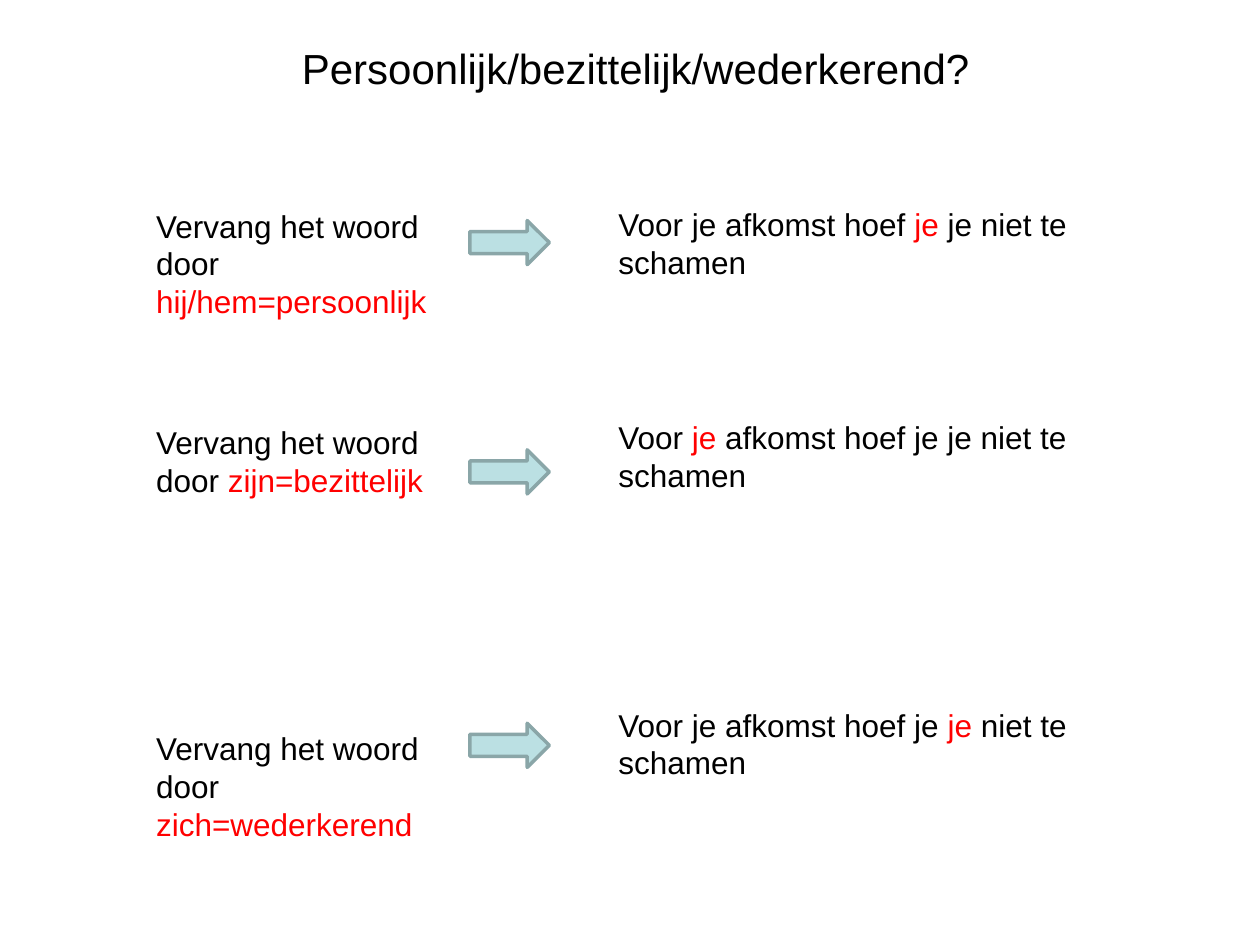
import pptx
import pptx.util
import pptx.dml.color
import pptx.enum.shapes
import pptx.enum.text

Inches = pptx.util.Inches
Pt = pptx.util.Pt
COLORS = {"text": "000000", "accent": "FF0000", "arrow": "BBE0E3", "outline": "8AA6A8"}


def rgb(name):
    return pptx.dml.color.RGBColor.from_string(COLORS[name])


def add_text(page, left, top, width, height, parts, size=18):
    """Add a wrapped text box; parts alternate between text and accent colour."""
    box = page.shapes.add_textbox(Inches(left), Inches(top), Inches(width), Inches(height))
    box.text_frame.word_wrap = True
    para = box.text_frame.paragraphs[0]
    for index, part in enumerate(parts):
        span = para.add_run()
        span.text = part
        span.font.name = "Arial"
        span.font.size = Pt(size)
        span.font.color.rgb = rgb("accent" if index % 2 else "text")
    return box


deck = pptx.Presentation()
deck.slide_width = Inches(10)
deck.slide_height = Inches(7.5)
page = deck.slides.add_slide(deck.slide_layouts[6])

title = add_text(page, 0.5, 0.17, 9.09, 0.73, ["Persoonlijk/bezittelijk/wederkerend?"], size=24)
title.text_frame.vertical_anchor = pptx.enum.text.MSO_ANCHOR.MIDDLE
title.text_frame.paragraphs[0].alignment = pptx.enum.text.PP_ALIGN.CENTER

# Replacement, example sentence, then the tops and height of rule, arrow and example
rows = [
    ("hij/hem=persoonlijk", ["Voor je afkomst hoef ", "je", " je niet te schamen"],
     1.59, 1.01, 1.75, 1.58),
    ("zijn=bezittelijk", ["Voor ", "je", " afkomst hoef je je niet te schamen"],
     3.31, 0.71, 3.57, 3.27),
    ("zich=wederkerend", ["Voor je afkomst hoef je ", "je", " niet te schamen"],
     5.74, 1.01, 5.74, 5.55),
]
for replacement, example, rule_top, rule_height, arrow_top, example_top in rows:
    add_text(page, 1.14, rule_top, 2.38, rule_height, ["Vervang het woord door ", replacement])

    arrow = page.shapes.add_shape(
        pptx.enum.shapes.MSO_SHAPE.RIGHT_ARROW,
        Inches(3.73), Inches(arrow_top), Inches(0.63), Inches(0.35))
    arrow.shadow.inherit = False
    arrow.fill.solid()
    arrow.fill.fore_color.rgb = rgb("arrow")
    arrow.line.color.rgb = rgb("outline")
    arrow.line.width = Pt(2)

    add_text(page, 4.81, example_top, 3.93, 0.71, example)

deck.save("out.pptx")
